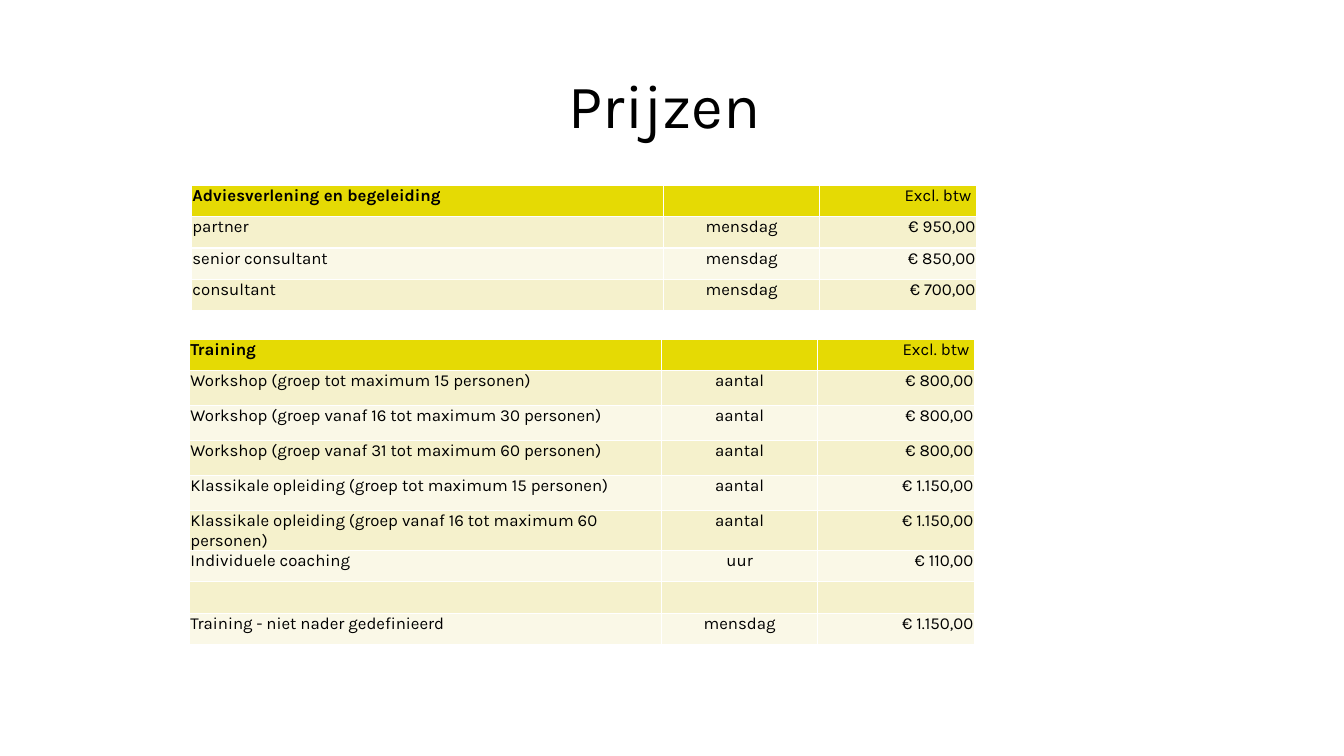
"""Build the price list slide with its two rate tables."""
from dataclasses import dataclass

import pptx
import pptx.dml.color
import pptx.enum.text
import pptx.util
from pptx.util import Cm

ALIGN = pptx.enum.text.PP_ALIGN


@dataclass(frozen=True)
class Theme:
    """Hold the colours, font and type sizes."""
    font: str = "Karla"
    ink: str = "000000"
    header: str = "E5DA04"
    bands: tuple = ("F5F1CC", "FAF8E7")
    title_size: int = 44
    table_size: int = 12


THEME = Theme()
COLUMN_WIDTHS = (11.89, 3.94, 3.94)
COLUMN_ALIGNS = (ALIGN.LEFT, ALIGN.CENTER, ALIGN.RIGHT)
ROW, TALL_ROW = 0.79, 0.88
TAX_LABEL = "Excl. btw "

ADVICE = (
    (ROW, "Adviesverlening en begeleiding", "", TAX_LABEL),
    (ROW, "partner", "mensdag", "€ 950,00"),
    (ROW, "senior consultant", "mensdag", "€ 850,00"),
    (ROW, "consultant", "mensdag", "€ 700,00"),
)
TRAINING = (
    (ROW, "Training", "", TAX_LABEL),
    (TALL_ROW, "Workshop (groep tot maximum 15 personen)", "aantal", "€ 800,00"),
    (TALL_ROW, "Workshop (groep vanaf 16 tot maximum 30 personen)", "aantal", "€ 800,00"),
    (TALL_ROW, "Workshop (groep vanaf 31 tot maximum 60 personen)", "aantal", "€ 800,00"),
    (TALL_ROW, "Klassikale opleiding (groep tot maximum 15 personen)", "aantal", "€ 1.150,00"),
    (TALL_ROW, "Klassikale opleiding (groep vanaf 16 tot maximum 60 personen)", "aantal", "€ 1.150,00"),
    (ROW, "Individuele coaching", "uur", "€ 110,00"),
    (ROW, "", "", ""),
    (ROW, "Training - niet nader gedefinieerd", "mensdag", "€ 1.150,00"),
)


def rgb(value):
    """Turn a hex string into a colour."""
    return pptx.dml.color.RGBColor.from_string(value)


def add_span(para, text, size, bold=False):
    """Add one formatted run to a paragraph."""
    span = para.add_run()
    span.text = text
    span.font.name = THEME.font
    span.font.size = pptx.util.Pt(size)
    span.font.bold = bold
    span.font.color.rgb = rgb(THEME.ink)


def set_title(page, text):
    """Place and format the page title."""
    box = page.shapes.title
    box.left, box.top, box.width, box.height = Cm(1.04), Cm(1.19), Cm(31.8), Cm(3.38)
    frame = box.text_frame
    frame.auto_size = pptx.enum.text.MSO_AUTO_SIZE.NONE
    frame.vertical_anchor = pptx.enum.text.MSO_ANCHOR.MIDDLE
    frame.margin_left = frame.margin_right = frame.margin_top = frame.margin_bottom = 0
    para = frame.paragraphs[0]
    para.alignment = ALIGN.CENTER
    para.line_spacing = pptx.util.Pt(38)
    add_span(para, text, THEME.title_size)


def fill_cell(cell, text, align, fill, bold):
    """Write and colour one table cell."""
    cell.margin_left = cell.margin_right = cell.margin_top = Cm(0.02)
    cell.margin_bottom = 0
    cell.fill.solid()
    cell.fill.fore_color.rgb = rgb(fill)
    para = cell.text_frame.paragraphs[0]
    para.alignment = align
    add_span(para, text, THEME.table_size, bold)


def add_price_table(page, left, top, entries):
    """Add a table with a header row and banded price rows."""
    height = sum(entry[0] for entry in entries)
    frame = page.shapes.add_table(
        len(entries), len(COLUMN_WIDTHS), Cm(left), Cm(top), Cm(sum(COLUMN_WIDTHS)), Cm(height))
    table = frame.table
    for column, width in zip(table.columns, COLUMN_WIDTHS):
        column.width = Cm(width)
    for index, (row_height, *texts) in enumerate(entries):
        table.rows[index].height = Cm(row_height)
        fill = THEME.bands[(index - 1) % 2] if index else THEME.header
        for number, (text, align) in enumerate(zip(texts, COLUMN_ALIGNS)):
            bold = index == 0 and number == 0
            fill_cell(table.cell(index, number), text, align, fill, bold)


def main():
    """Create the deck and save it."""
    deck = pptx.Presentation()
    deck.slide_width, deck.slide_height = Cm(33.87), Cm(19.05)
    page = deck.slides.add_slide(deck.slide_layouts.get_by_name("Title Only"))
    set_title(page, "Prijzen ")
    add_price_table(page, 4.83, 4.67, ADVICE)
    add_price_table(page, 4.78, 8.55, TRAINING)
    deck.save("out.pptx")


if __name__ == "__main__":
    main()
